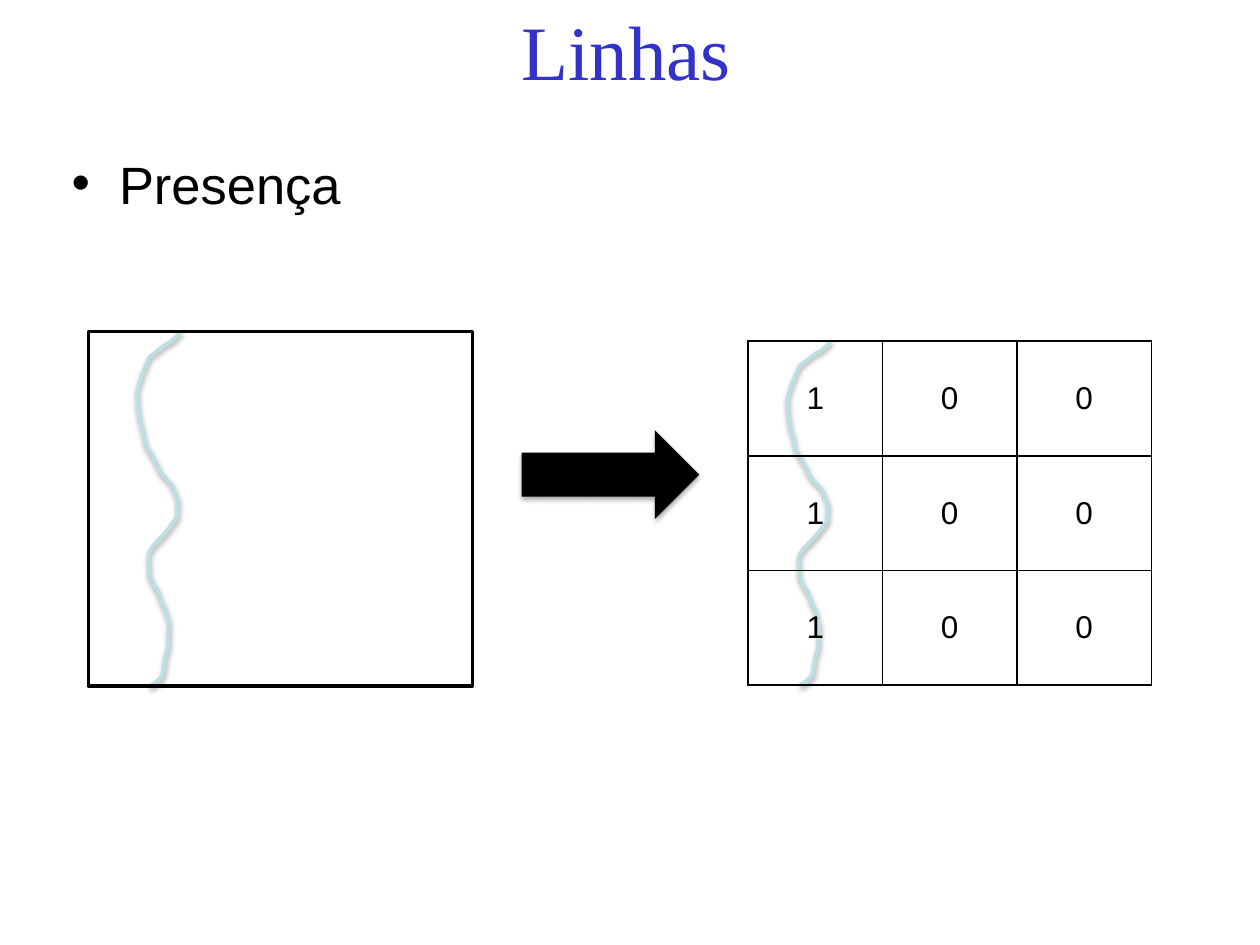
from dataclasses import dataclass

from lxml import etree
from pptx import Presentation
from pptx import util as u
from pptx.dml.color import RGBColor
from pptx.enum import shapes, text
from pptx.oxml import ns

Pt = u.Pt
BLACK, BLUE, RIVER = "000000", "3333CC", "BBE0E3"

# River course in points, from the left and top of its outline
COURSE = [
    (25, 0), (19, 6), (16.5, 7), (7, 14.5), (3, 24), (1.5, 29), (0, 34),
    (0.5, 42), (1.5, 50.5), (3, 55.5), (5, 65), (8.5, 70.5), (11.5, 76.5),
    (13, 80), (16.5, 84), (19, 86.5), (21.5, 92), (23, 97), (22.5, 106),
    (17.5, 113), (14.5, 116.5), (12, 119), (8.5, 123), (7, 125.5),
    (6.5, 127.5), (7, 139.5), (8.5, 142), (9.5, 145), (11.5, 147), (13, 152),
    (16, 158.5), (18, 166.5), (17.5, 180.5), (16, 185), (14.5, 196),
    (13, 198), (11, 200), (7, 202.5),
]
PRESENCE = [(1, 0, 0)] * 3


@dataclass
class Box:
    left: float
    top: float
    width: float
    height: float

    def lengths(self) -> tuple:
        return tuple(Pt(v) for v in (self.left, self.top, self.width, self.height))


@dataclass
class River:
    left: float
    top: float
    stretch: float


def color(value: str) -> RGBColor:
    return RGBColor.from_string(value)


def add_node(parent, tag: str, **attrs):
    return etree.SubElement(parent, ns.qn(tag), {k: str(v) for k, v in attrs.items()})


def add_shadow(sp, opacity: int) -> None:
    sp.shadow.inherit = False
    effects = sp._element.spPr.find(ns.qn("a:effectLst"))
    shadow = add_node(effects, "a:outerShdw", blurRad=Pt(3.1), dist=Pt(1.7),
                      dir=90 * 60000, rotWithShape=0)
    tone = add_node(shadow, "a:srgbClr", val=BLACK)
    add_node(tone, "a:alpha", val=opacity * 1000)


def add_run(p, words: str, size: float, font: str, tone: str) -> None:
    r = p.add_run()
    r.text = words
    r.font.size, r.font.name = Pt(size), font
    r.font.color.rgb = color(tone)


def add_text(s, box: Box, anchor):
    tf = s.shapes.add_textbox(*box.lengths()).text_frame
    tf.word_wrap = True
    tf.vertical_anchor = anchor
    return tf


def add_river(s, river: River) -> None:
    points = [(Pt(river.left + x), Pt(river.top + y * river.stretch)) for x, y in COURSE]
    builder = s.shapes.build_freeform(*points[0])
    builder.add_line_segments(points[1:], close=False)
    sp = builder.convert_to_shape()
    sp.fill.background()
    sp.line.color.rgb = color(RIVER)
    sp.line.width = Pt(2)
    add_shadow(sp, 38)


def add_border(cell) -> None:
    props = cell._tc.get_or_add_tcPr()
    for i, side in enumerate(("a:lnL", "a:lnR", "a:lnT", "a:lnB")):
        line = etree.Element(ns.qn(side), w=str(Pt(1)))
        add_node(add_node(line, "a:solidFill"), "a:srgbClr", val=BLACK)
        props.insert(i, line)


def add_grid(s, box: Box, values: list) -> None:
    table = s.shapes.add_table(len(values), len(values[0]), *box.lengths()).table
    table.first_row = table.horz_banding = False
    for col in table.columns:
        col.width = Pt(box.width / len(values[0]))
    for row, numbers in zip(table.rows, values):
        row.height = Pt(box.height / len(values))
        for cell, number in zip(row.cells, numbers):
            cell.fill.background()
            add_border(cell)
            cell.vertical_anchor = text.MSO_ANCHOR.MIDDLE
            p = cell.text_frame.paragraphs[0]
            p.alignment = text.PP_ALIGN.CENTER
            add_run(p, str(number), 18, "Arial", BLACK)


def main() -> None:
    prs = Presentation()
    prs.slide_width, prs.slide_height = Pt(720), Pt(540)
    s = prs.slides.add_slide(prs.slide_layouts[6])

    # Rivers, behind the frame and the grid
    for river in (River(450, 195, 0.97), River(78.5, 189.5, 1)):
        add_river(s, river)

    # Frame around the left river
    sp = s.shapes.add_shape(shapes.MSO_SHAPE.RECTANGLE, *Box(50.5, 189.5, 219.5, 202.5).lengths())
    sp.shadow.inherit = False
    sp.fill.background()
    sp.line.color.rgb = color(BLACK)
    sp.line.width = Pt(2)

    # Presence grid
    add_grid(s, Box(427.5, 195, 230.4, 196.5), PRESENCE)

    # Title
    tf = add_text(s, Box(34, -6, 648, 68.5), text.MSO_ANCHOR.MIDDLE)
    p = tf.paragraphs[0]
    p.alignment = text.PP_ALIGN.CENTER
    add_run(p, "Linhas", 44, "Times New Roman", BLUE)

    # Bullet
    tf = add_text(s, Box(28, 90, 648, 37.5), text.MSO_ANCHOR.TOP)
    tf.margin_left = Pt(13)
    p = tf.paragraphs[0]
    p.line_spacing, p.space_before = 0.8, Pt(6)
    props = p._p.get_or_add_pPr()
    props.set("marL", str(Pt(27)))
    props.set("indent", str(-Pt(27)))
    add_node(props, "a:buFont", typeface="Arial")
    add_node(props, "a:buChar", char="•")
    add_run(p, "Presença", 30, "Arial", BLACK)

    # Arrow from map to grid
    sp = s.shapes.add_shape(shapes.MSO_SHAPE.RIGHT_ARROW, *Box(298, 246, 101.5, 50.5).lengths())
    sp.fill.solid()
    sp.fill.fore_color.rgb = color(BLACK)
    sp.line.fill.background()
    add_shadow(sp, 35)

    prs.save("out.pptx")


if __name__ == "__main__":
    main()
